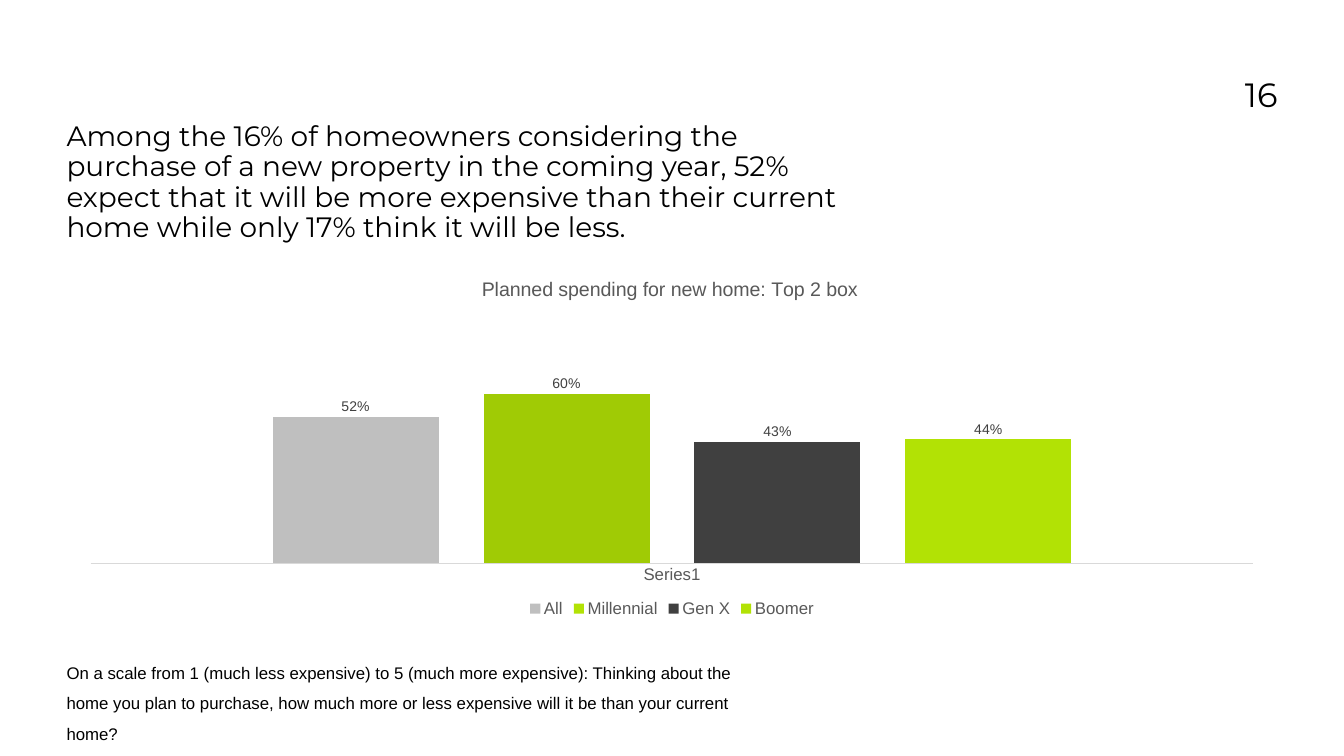
from typing import NamedTuple

from lxml import etree
from pptx import Presentation
from pptx.chart.data import CategoryChartData
from pptx.dml.color import RGBColor
from pptx.enum.chart import (XL_CHART_TYPE, XL_LABEL_POSITION,
                             XL_LEGEND_POSITION, XL_TICK_LABEL_POSITION,
                             XL_TICK_MARK)
from pptx.enum.text import MSO_ANCHOR, PP_ALIGN
from pptx.oxml.ns import qn
from pptx.util import Inches, Pt

COLUMN = XL_CHART_TYPE.COLUMN_CLUSTERED
OUTSIDE = XL_LABEL_POSITION.OUTSIDE_END
BOTTOM = XL_LEGEND_POSITION.BOTTOM
NO_TICK = XL_TICK_MARK.NONE
NO_LABEL = XL_TICK_LABEL_POSITION.NONE
LEFT, RIGHT = PP_ALIGN.LEFT, PP_ALIGN.RIGHT
TOP, MIDDLE = MSO_ANCHOR.TOP, MSO_ANCHOR.MIDDLE

BLACK = RGBColor(0x00, 0x00, 0x00)
DARK = RGBColor(0x40, 0x40, 0x40)
GREY = RGBColor(0x59, 0x59, 0x59)
SILVER = RGBColor(0xBF, 0xBF, 0xBF)
PALE = RGBColor(0xD9, 0xD9, 0xD9)
LIME = RGBColor(0xB2, 0xE2, 0x05)
OLIVE = RGBColor(0xA0, 0xCB, 0x05)

WIDE, HIGH = 26.67, 15
EDGE = 1.32
INNER = WIDE - 2 * EDGE
HEAD, BODY = "Montserrat", "Arial"


class Box(NamedTuple):
    left: float
    top: float
    width: float
    height: float

    def lengths(self):
        return [Inches(n) for n in self]


class Group(NamedTuple):
    name: str
    share: float
    fill: RGBColor
    bar: RGBColor


GROUPS = [
    Group("All", 0.52, SILVER, SILVER),
    Group("Millennial", 0.60, LIME, OLIVE),
    Group("Gen X", 0.43, DARK, DARK),
    Group("Boomer", 0.44, LIME, LIME),
]


def style(font, size: float, color: RGBColor, name: str = BODY):
    font.size, font.name, font.bold = Pt(size), name, False
    font.color.rgb = color


def write(slide, box: Box, text: str, *, size: float, font: str = BODY,
          align=LEFT, anchor=TOP, gap: float = 1.0, wrap: bool = True,
          inset: float = 0):
    frame = slide.shapes.add_textbox(*box.lengths()).text_frame
    frame.word_wrap, frame.vertical_anchor = wrap, anchor
    frame.margin_left = frame.margin_right = frame.margin_bottom = 0
    frame.margin_top = Inches(inset)
    para = frame.paragraphs[0]
    para.alignment, para.line_spacing = align, gap
    run = para.add_run()
    run.text = text
    style(run.font, size, BLACK, font)


def place(part, **values):
    """Fix a chart part's layout, as shares of the chart's size."""
    layout = part.find(qn("c:layout"))
    if layout is None:
        layout = etree.Element(qn("c:layout"))
        text = part.find(qn("c:tx"))
        part.insert(0 if text is None else 1, layout)
    for old in list(layout):
        layout.remove(old)
    manual = etree.SubElement(layout, qn("c:manualLayout"))
    for key, value in values.items():
        etree.SubElement(manual, qn("c:" + key)).set("val", str(value))


def draw_chart(slide, box: Box, title: str, groups: list[Group]):
    data = CategoryChartData(number_format="0%")
    data.categories = ["Series1"]
    for group in groups:
        data.add_series(group.name, [group.share])
    chart = slide.shapes.add_chart(COLUMN, *box.lengths(), data).chart
    style(chart.font, 10, BLACK, "Vollkorn")

    chart.has_title = True
    head = chart.chart_title
    head.include_in_layout = False
    head.text_frame.text = title
    style(head.text_frame.paragraphs[0].runs[0].font, 28, GREY)
    place(head._element, xMode="edge", yMode="edge", x=0.34, y=0.04)

    chart.has_legend = True
    chart.legend.position = BOTTOM
    chart.legend.include_in_layout = False
    style(chart.legend.font, 24, GREY)

    axis = chart.category_axis
    axis.major_tick_mark = axis.minor_tick_mark = NO_TICK
    axis.format.line.color.rgb = PALE
    axis.format.line.width = Pt(0.75)
    style(axis.tick_labels.font, 24, GREY)

    axis = chart.value_axis
    axis.minimum_scale, axis.maximum_scale = 0, 0.9
    axis.has_major_gridlines = False
    axis.tick_label_position = NO_LABEL
    axis.visible = False

    plot = chart.plots[0]
    plot.gap_width, plot.overlap = 219, -27
    plot.vary_by_categories = False
    for series, group in zip(plot.series, groups):
        series.format.fill.solid()
        series.format.fill.fore_color.rgb = group.fill
        if group.bar != group.fill:
            fill = series.points[0].format.fill
            fill.solid()
            fill.fore_color.rgb = group.bar
        labels = series.data_labels
        labels.show_value, labels.position = True, OUTSIDE
        labels.number_format, labels.number_format_is_linked = "0%", False
        style(labels.font, 20, DARK)
    place(chart._chartSpace.chart.plotArea, layoutTarget="inner",
          xMode="edge", yMode="edge", x=0.02, y=0.14, w=0.96, h=0.7)


def main():
    deck = Presentation()
    deck.slide_width, deck.slide_height = Inches(WIDE), Inches(HIGH)
    slide = deck.slides.add_slide(deck.slide_layouts[6])

    write(slide, Box(WIDE - EDGE - 2.25, 0.88, 2.25, 1.64), "16",
          size=48, font=HEAD, align=RIGHT, anchor=MIDDLE, wrap=False,
          inset=0.33)
    draw_chart(slide, Box(EDGE, 5.13, INNER, 0.48 * HIGH),
               "Planned spending for new home: Top 2 box", GROUPS)
    write(slide, Box(EDGE, 2.43, 0.6 * WIDE, 0.1 * HIGH),
          "Among the 16% of homeowners considering the purchase of a new "
          "property in the coming year, 52% expect that it will be more "
          "expensive than their current home while only 17% think it will "
          "be less.", size=40, font=HEAD, gap=0.9)
    write(slide, Box(EDGE, 12.95, 14, 0.65),
          "On a scale from 1 (much less expensive) to 5 (much more "
          "expensive): Thinking about the home you plan to purchase, how "
          "much more or less expensive will it be than your current home?",
          size=24, gap=1.5)
    deck.save("out.pptx")


if __name__ == "__main__":
    main()
